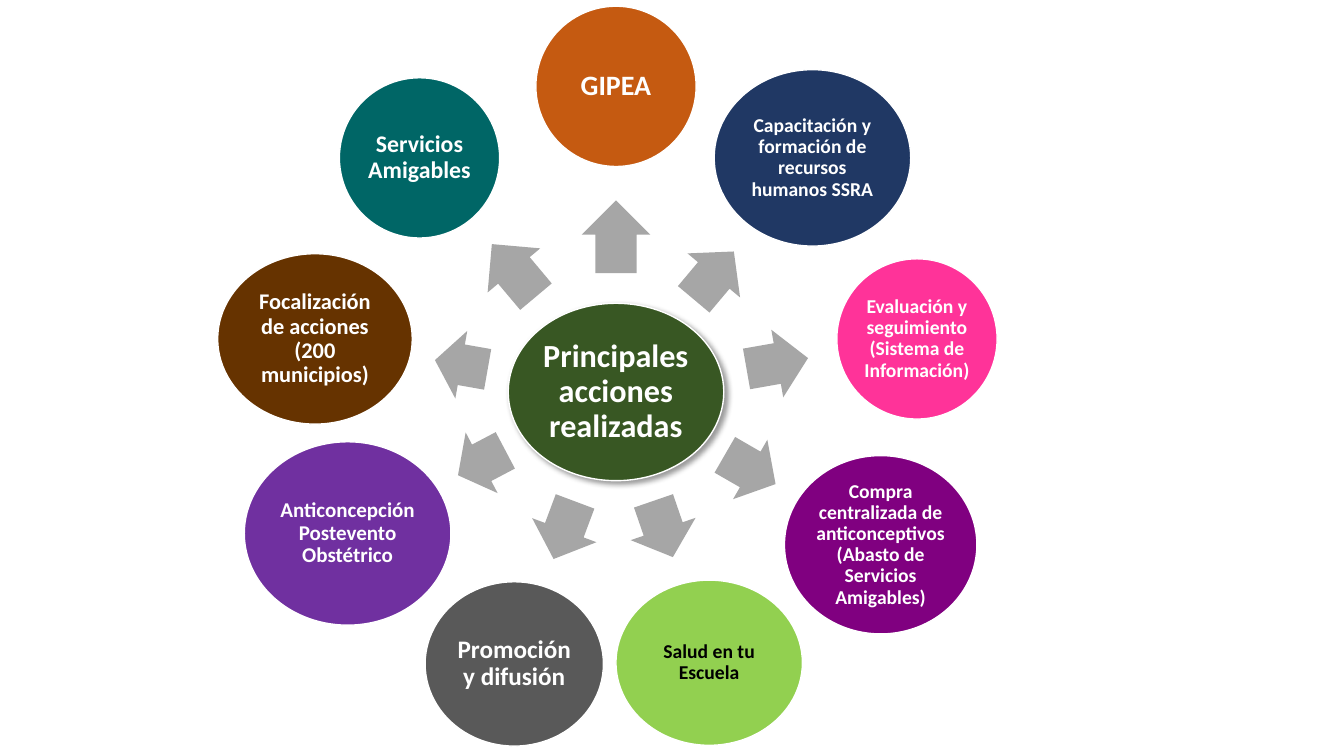
"""Build a radial slide of the main actions carried out."""
from dataclasses import dataclass
from math import cos, radians, sin

from lxml.etree import SubElement
from pptx import Presentation
from pptx.dml.color import RGBColor as Rgb
from pptx.enum.shapes import MSO_SHAPE as Kind
from pptx.enum.text import MSO_ANCHOR as Anchor, PP_ALIGN as Align
from pptx.oxml.ns import qn
from pptx.shapes.autoshape import Shape
from pptx.shapes.shapetree import SlideShapes as Shapes
from pptx.util import Pt


@dataclass(frozen=True)
class Theme:
    font: str = "Calibri"
    light: str = "FFFFFF"
    dark: str = "000000"
    arrow: str = "A6A6A6"
    hub: str = "385723"
    gipea: str = "C55A11"
    training: str = "203864"
    review: str = "FF3399"
    supply: str = "800080"
    school: str = "92D050"
    outreach: str = "595959"
    postpartum: str = "7030A0"
    focus: str = "663300"
    service: str = "006666"
    title: int = 23
    large: int = 20
    medium: int = 18
    friendly: int = 17
    local: int = 16
    event: int = 15
    small: int = 14


@dataclass(frozen=True)
class Disc:
    text: str
    fill: str
    size: int
    wide: float = 114.5
    high: float = 114.5
    ink: str = Theme.light


@dataclass(frozen=True)
class Spoke:
    turn: float
    arm: float
    span: float
    disc: Disc
    reach: float = 218.3


T = Theme()
HUB_X, HUB_Y = 440, 280
ARROW_HIGH = 49
HUB = Disc("Principales acciones realizadas", T.hub, T.title, 154, 126.7)
SPOKES = [
    Spoke(270, 110.9, 52, Disc("GIPEA", T.gipea, T.large)),
    Spoke(310, 108.7, 44.6, Disc("Capacitación y formación de recursos humanos SSRA",
                                 T.training, T.small, 140.4, 126)),
    Spoke(350, 117, 44.6, Disc("Evaluación y seguimiento (Sistema de Información)",
                               T.review, T.small)),
    Spoke(30, 110.7, 41.8, Disc("Compra centralizada de anticonceptivos (Abasto de Servicios Amigables)",
                                T.supply, T.small, 137.5, 127.4)),
    Spoke(71, 103.5, 42.5, Disc("Salud en tu Escuela", T.school, T.small,
                                133.2, 118, T.dark), 204.5),
    Spoke(110.5, 105.4, 43.9, Disc("Promoción y difusión", T.outreach, T.medium,
                                   127.4, 117.4), 207.4),
    Spoke(152.2, 108.5, 38.2, Disc("Anticoncepción Postevento Obstétrico",
                                   T.postpartum, T.event, 147.6, 131), 216.7),
    Spoke(190, 112.2, 38.2, Disc("Focalización de acciones (200 municipios)",
                                 T.focus, T.local, 139, 121.7)),
    Spoke(230, 113.4, 49, Disc("Servicios Amigables", T.service, T.friendly)),
]


def polar(turn: float, reach: float) -> tuple[float, float]:
    """Return the point at an angle and distance from the hub."""
    rad = radians(turn)
    return HUB_X + reach * cos(rad), HUB_Y + reach * sin(rad)


def place(shapes: Shapes, kind: Kind, x: float, y: float,
          wide: float, high: float, fill: str) -> Shape:
    """Add a filled shape centred on a point."""
    shape = shapes.add_shape(kind, Pt(x - wide / 2), Pt(y - high / 2), Pt(wide), Pt(high))
    shape.shadow.inherit = False
    shape.fill.solid()
    shape.fill.fore_color.rgb = Rgb.from_string(fill)
    return shape


def add_disc(shapes: Shapes, disc: Disc, x: float, y: float) -> Shape:
    """Draw a labelled ellipse centred on a point."""
    shape = place(shapes, Kind.OVAL, x, y, disc.wide, disc.high, disc.fill)
    shape.line.color.rgb = Rgb.from_string(T.light)
    shape.line.width = Pt(1)
    frame = shape.text_frame
    frame.text = disc.text
    frame.word_wrap = True
    frame.vertical_anchor = Anchor.MIDDLE
    inset = Pt(2 if disc.size >= T.medium else 1.5)
    frame.margin_left = frame.margin_right = inset
    frame.margin_top = frame.margin_bottom = inset
    para = frame.paragraphs[0]
    para.alignment = Align.CENTER
    para.line_spacing = 0.9
    font = para.runs[0].font
    font.name, font.size, font.bold = T.font, Pt(disc.size), True
    font.color.rgb = Rgb.from_string(disc.ink)
    return shape


def add_arrow(shapes: Shapes, spoke: Spoke) -> None:
    """Draw the block arrow that points outward along a spoke."""
    x, y = polar(spoke.turn, spoke.arm)
    arrow = place(shapes, Kind.RIGHT_ARROW, x, y, spoke.span, ARROW_HIGH, T.arrow)
    arrow.line.fill.background()
    arrow.adjustments[0], arrow.adjustments[1] = 0.6, 0.5
    arrow.rotation = spoke.turn


def add_shade(shape: Shape) -> None:
    """Give a shape a soft shadow to the lower right."""
    effects = shape.element.spPr.find(qn("a:effectLst"))
    shade = SubElement(effects, qn("a:outerShdw"), blurRad=str(Pt(4)),
                       dist=str(Pt(3)), dir="2700000", algn="tl", rotWithShape="0")
    color = SubElement(shade, qn("a:srgbClr"), val=T.dark)
    SubElement(color, qn("a:alpha"), val="40000")


def main() -> None:
    """Build the slide and save it."""
    deck = Presentation()
    deck.slide_width, deck.slide_height = Pt(960), Pt(540)
    shapes = deck.slides.add_slide(deck.slide_layouts[6]).shapes
    add_shade(add_disc(shapes, HUB, HUB_X, HUB_Y))
    for spoke in SPOKES:
        add_arrow(shapes, spoke)
        add_disc(shapes, spoke.disc, *polar(spoke.turn, spoke.reach))
    deck.save("out.pptx")


if __name__ == "__main__":
    main()
